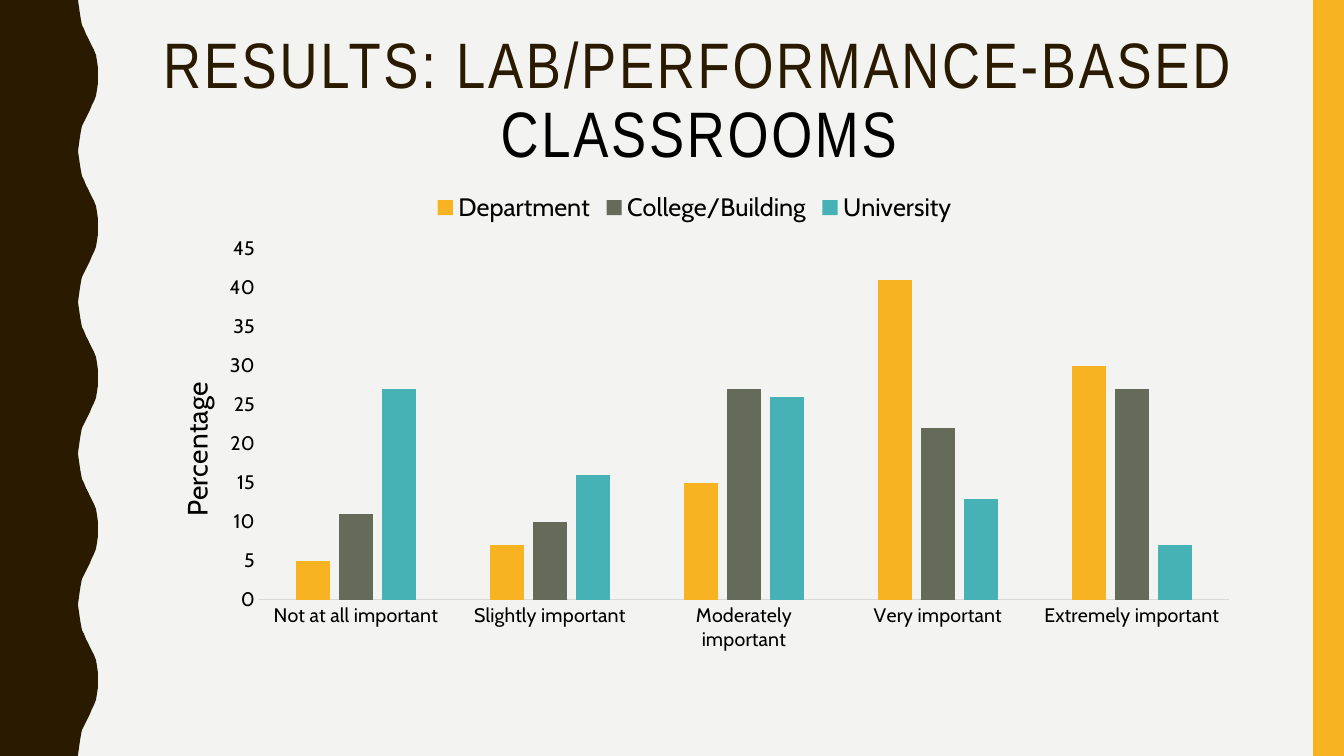
from lxml.etree import SubElement
from pptx import Presentation
from pptx.chart.data import CategoryChartData
from pptx.dml.color import RGBColor
from pptx.enum.chart import XL_CHART_TYPE, XL_LEGEND_POSITION, XL_TICK_MARK
from pptx.enum.shapes import MSO_SHAPE
from pptx.enum.text import MSO_ANCHOR, PP_ALIGN
from pptx.oxml.ns import qn
from pptx.util import Pt

COLORS = {
    "background": "F3F3F2", "brown": "2A1A00", "gold": "F8B323", "olive": "656A59",
    "teal": "46B2B5", "black": "000000", "axis": "D9D9D9",
}
TITLE_FONT, CHART_FONT = "Arial Narrow", "Cabin"

TITLE = [("RESULTS: LAB/PERFORMANCE-BASED ", "brown"), ("CLASSROOMS", "black")]
RATINGS = ["Not at all important", "Slightly important", "Moderately important",
           "Very important", "Extremely important"]
LEVELS = [
    ("Department", "gold", (5, 7, 15, 41, 30)),
    ("College/Building", "olive", (11, 10, 27, 22, 27)),
    ("University", "teal", (27, 16, 26, 13, 7)),
]
VALUE_TITLE = "Percentage"

# All lengths in px
SLIDE_W, SLIDE_H = 1344, 756
PX = 12192000 / SLIDE_W
STRIPE = (1313, 0, 31, SLIDE_H)
TITLE_BOX = (138, 28, 1122, 88)
CHART_BOX = (138, 180, 1113, 482)
PLOT_BOX = (259, 249, 970, 351)
VALUE_TITLE_AT = (172, 377)

# One half wave of the left edge, from trough to crest
HALF_WAVES = 10
WAVE_X = [78, 79, 80, 81, 82, 84, 86, 88, 90, 92, 94, 96, 97, 98, 98]
WAVE_Y = [0, 7, 14, 20, 25, 29, 34, 38, 42, 46, 50, 55, 61, 68, 75]


def emu(*lengths):
    return [round(length * PX) for length in lengths]


def rgb(name):
    return RGBColor.from_string(COLORS[name])


def paint(shape, color):
    shape.shadow.inherit = False
    shape.fill.solid()
    shape.fill.fore_color.rgb = rgb(color)
    shape.line.fill.background()


def style_font(font, size, name=CHART_FONT, color="black"):
    font.size = Pt(size)
    font.name = name
    font.color.rgb = rgb(color)
    font.bold = False


def manual_layout(parent, **settings):
    """Fix a chart part's place, with x, y, w and h as shares of the chart."""
    layout = parent.find(qn("c:layout"))
    if layout is None:
        layout = parent.makeelement(qn("c:layout"))
        before = parent.find(qn("c:tx"))
        parent.insert(0 if before is None else parent.index(before) + 1, layout)
    manual = SubElement(layout, qn("c:manualLayout"))
    for tag, value in settings.items():
        SubElement(manual, qn(f"c:{tag}")).set("val", str(value))


def add_wave(slide):
    edge = []
    for half in range(HALF_WAVES):
        across = WAVE_X if half % 2 == 0 else WAVE_X[::-1]
        top = round(half * SLIDE_H / HALF_WAVES)
        edge += [(x, top + y) for x, y in zip(across, WAVE_Y)]
    builder = slide.shapes.build_freeform(0, 0, scale=PX)
    builder.add_line_segments(edge + [(WAVE_X[0], SLIDE_H), (0, SLIDE_H)], close=True)
    paint(builder.convert_to_shape(), "brown")


def add_title(slide):
    frame = slide.shapes.add_textbox(*emu(*TITLE_BOX)).text_frame
    frame.word_wrap = True
    frame.vertical_anchor = MSO_ANCHOR.TOP
    paragraph = frame.paragraphs[0]
    paragraph.alignment = PP_ALIGN.CENTER
    paragraph.line_spacing = 0.9
    for text, color in TITLE:
        run = paragraph.add_run()
        run.text = text
        style_font(run.font, 45.9, TITLE_FONT, color)
        run.font._element.set("spc", "200")


def add_importance_chart(slide):
    data = CategoryChartData(number_format="0")
    data.categories = RATINGS
    for name, _, values in LEVELS:
        data.add_series(name, values)
    chart = slide.shapes.add_chart(
        XL_CHART_TYPE.COLUMN_CLUSTERED, *emu(*CHART_BOX), data).chart
    style_font(chart.font, 10)
    chart.has_title = False

    chart.has_legend = True
    chart.legend.position = XL_LEGEND_POSITION.TOP
    chart.legend.include_in_layout = False
    style_font(chart.legend.font, 18)

    plot = chart.plots[0]
    plot.gap_width, plot.overlap, plot.vary_by_categories = 219, -27, False
    for series, (_, color, _) in zip(plot.series, LEVELS):
        series.format.fill.solid()
        series.format.fill.fore_color.rgb = rgb(color)

    rating_axis, percent_axis = chart.category_axis, chart.value_axis
    for axis in (rating_axis, percent_axis):
        axis.has_major_gridlines = False
        axis.major_tick_mark = axis.minor_tick_mark = XL_TICK_MARK.NONE
        style_font(axis.tick_labels.font, 14)
    rating_axis.format.line.color.rgb = rgb("axis")
    rating_axis.format.line.width = Pt(0.75)
    percent_axis.format.line.fill.background()
    percent_axis.minimum_scale, percent_axis.maximum_scale = 0, 45
    percent_axis.major_unit = 5
    title = percent_axis.axis_title
    run = title.text_frame.paragraphs[0].add_run()
    run.text = VALUE_TITLE
    style_font(run.font, 20)

    left, top, width, height = CHART_BOX
    x, y, w, h = PLOT_BOX
    manual_layout(plot._element.getparent(), layoutTarget="inner", xMode="edge", yMode="edge",
                  x=(x - left) / width, y=(y - top) / height, w=w / width, h=h / height)
    x, y = VALUE_TITLE_AT
    manual_layout(title._element, xMode="edge", yMode="edge",
                  x=(x - left) / width, y=(y - top) / height)


def main():
    deck = Presentation()
    deck.slide_width, deck.slide_height = emu(SLIDE_W, SLIDE_H)
    slide = deck.slides.add_slide(deck.slide_layouts[6])
    slide.background.fill.solid()
    slide.background.fill.fore_color.rgb = rgb("background")
    add_wave(slide)
    paint(slide.shapes.add_shape(MSO_SHAPE.RECTANGLE, *emu(*STRIPE)), "gold")
    add_title(slide)
    add_importance_chart(slide)
    deck.save("out.pptx")


if __name__ == "__main__":
    main()
